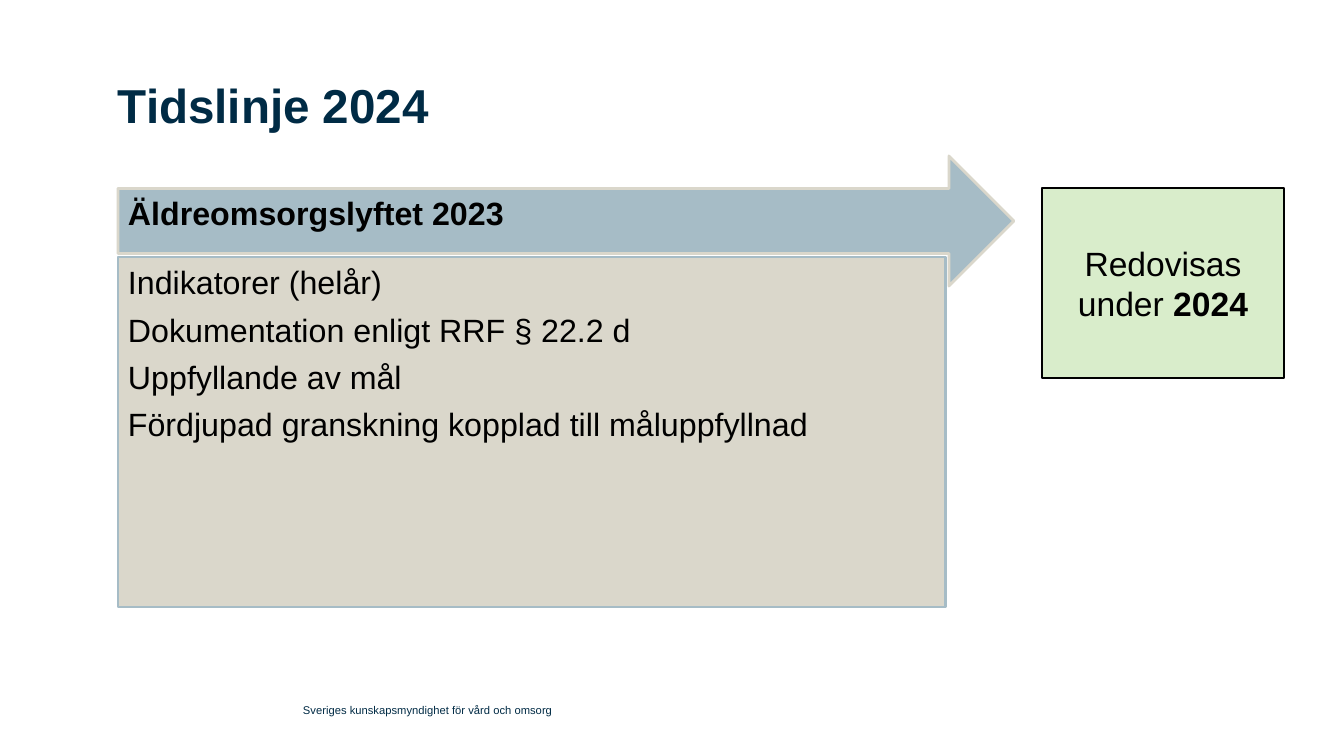
from pptx import Presentation
from pptx import util as u
from pptx.dml.color import RGBColor
from pptx.enum import shapes, text

PX = 914400 / 100.8  # EMU per px

THEME = {
    "font": "Arial",
    "navy": "002B45", "black": "000000",
    "blue": "A6BCC6", "sand": "DAD7CB", "green": "D9EDCB",
    "title": 34, "body": 23, "result": 24, "footer": 8,
}


def add_box(kind, box, fill=None, line=None, insets=(0, 0, 0, 0), anchor=text.MSO_ANCHOR.TOP):
    """Add a preset shape, or a text box when kind is None."""
    left, top, width, height = (round(value * PX) for value in box)
    if kind is None:
        shape = slide.shapes.add_textbox(left, top, width, height)
    else:
        shape = slide.shapes.add_shape(kind, left, top, width, height)
        shape.shadow.inherit = False
        shape.fill.solid()
        shape.fill.fore_color.rgb = RGBColor.from_string(THEME[fill])
        shape.line.color.rgb = RGBColor.from_string(THEME[line])
        shape.line.width = u.Pt(2)
    frame = shape.text_frame
    frame.word_wrap = True
    frame.vertical_anchor = anchor
    frame.margin_left, frame.margin_top, frame.margin_right, frame.margin_bottom = (
        round(value * PX) for value in insets)
    return frame


def add_lines(frame, lines, size, color, bold=False, align=text.PP_ALIGN.LEFT,
              line_spacing=1.0, space_after=0):
    """Write one paragraph per line of text."""
    for index, line in enumerate(lines):
        paragraph = frame.add_paragraph() if index else frame.paragraphs[0]
        paragraph.add_run().text = line
        paragraph.alignment = align
        paragraph.line_spacing = line_spacing
        paragraph.space_after = u.Pt(space_after)
        paragraph.font.name = THEME["font"]
        paragraph.font.size = u.Pt(THEME[size])
        paragraph.font.bold = bold
        paragraph.font.color.rgb = RGBColor.from_string(THEME[color])


presentation = Presentation()
presentation.slide_width = round(1344 * PX)
presentation.slide_height = round(756 * PX)
slide = presentation.slides.add_slide(presentation.slide_layouts[6])

# Timeline arrow
arrow = add_box(shapes.MSO_SHAPE.RIGHT_ARROW, (118, 156, 896, 130), "blue", "sand",
                (10, 10, 28, 21), text.MSO_ANCHOR.MIDDLE)
add_lines(arrow, ["Äldreomsorgslyftet 2023"], "body", "black", bold=True, line_spacing=0.9)

# What is reported
report = add_box(shapes.MSO_SHAPE.RECTANGLE, (118, 257, 828, 350), "sand", "blue",
                 (10, 10, 10, 10))
add_lines(report, [
    "Indikatorer (helår)",
    "Dokumentation enligt RRF § 22.2 d",
    "Uppfyllande av mål",
    "Fördjupad granskning kopplad till måluppfyllnad",
], "body", "black", line_spacing=0.9, space_after=9)

# Title
title = add_box(None, (118, 76, 1022, 143))
add_lines(title, ["Tidslinje 2024"], "title", "navy", bold=True)

# Footer
footer = add_box(None, (303, 695, 596, 29), anchor=text.MSO_ANCHOR.MIDDLE)
add_lines(footer, ["Sveriges kunskapsmyndighet för vård och omsorg"], "footer", "navy")

# Reporting year
result = add_box(shapes.MSO_SHAPE.RECTANGLE, (1042, 188, 242, 190), "green", "black",
                 (10, 5, 10, 5), text.MSO_ANCHOR.MIDDLE)
add_lines(result, ["Redovisas", "under "], "result", "black", align=text.PP_ALIGN.CENTER)
year = result.paragraphs[1].add_run()
year.text = "2024"
year.font.bold = True

presentation.save("out.pptx")
